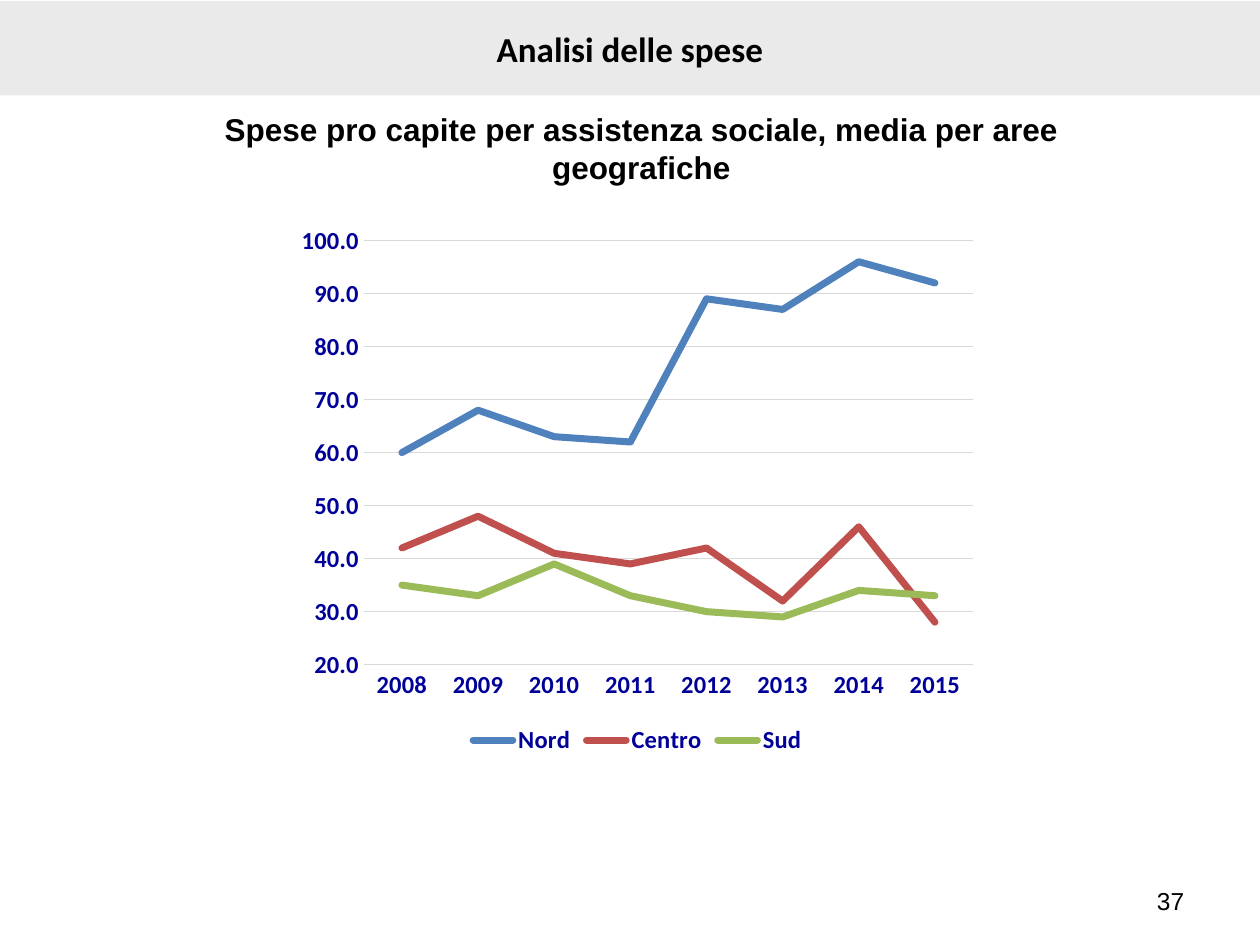
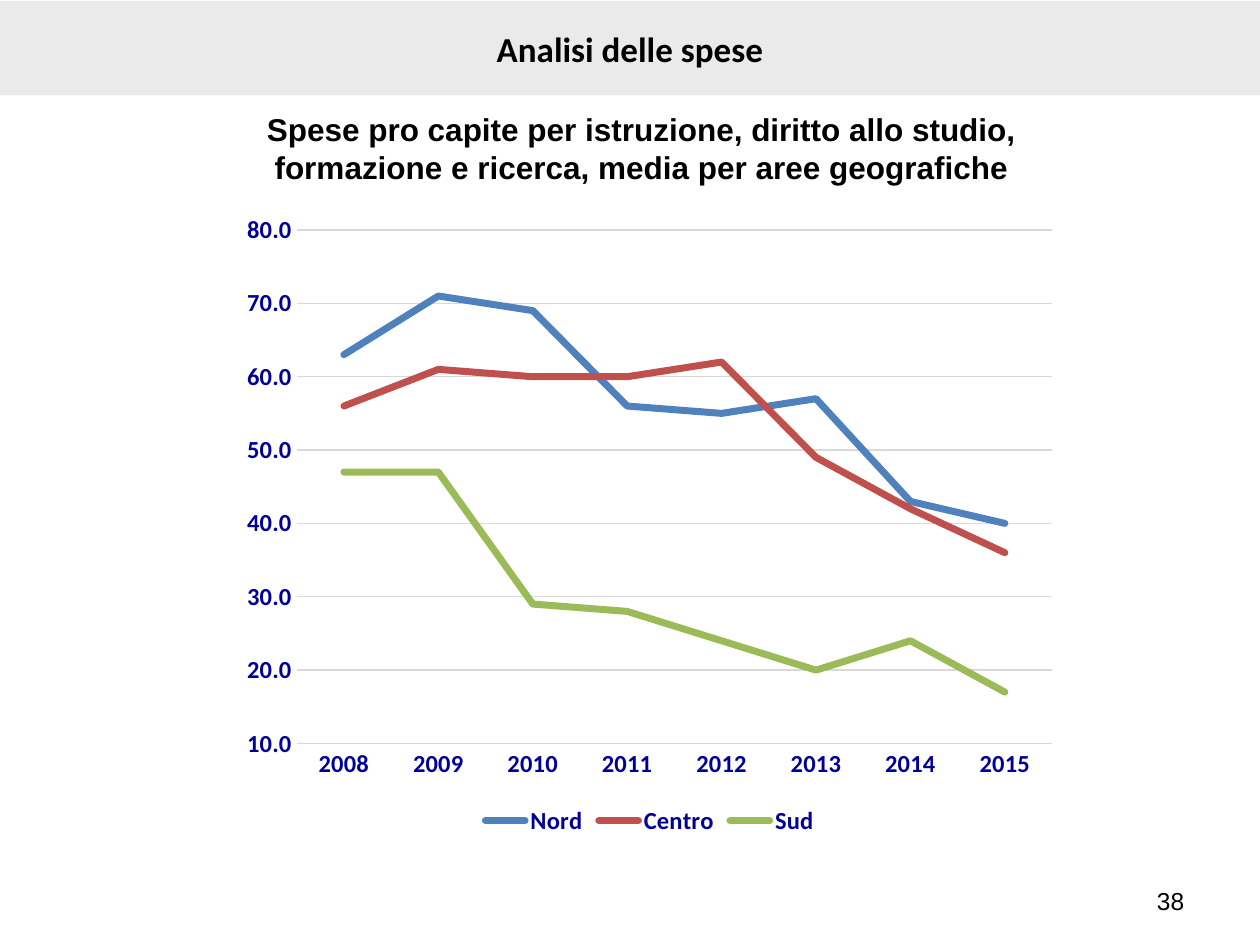
from pptx import Presentation
from pptx.chart.data import CategoryChartData
from pptx.dml.color import RGBColor
from pptx.enum.chart import XL_CHART_TYPE, XL_LEGEND_POSITION, XL_TICK_MARK
from pptx.enum.shapes import MSO_SHAPE
from pptx.enum.text import MSO_ANCHOR, PP_ALIGN
from pptx.oxml.ns import qn
from pptx.util import Pt

LINE = XL_CHART_TYPE.LINE
BOTTOM = XL_LEGEND_POSITION.BOTTOM
NO_TICK = XL_TICK_MARK.NONE
RECT = MSO_SHAPE.RECTANGLE
TOP, MIDDLE = MSO_ANCHOR.TOP, MSO_ANCHOR.MIDDLE
CENTER, RIGHT = PP_ALIGN.CENTER, PP_ALIGN.RIGHT

COLORS = {
    "text": "000000", "band": "EAEAEA", "label": "000099", "grid": "D9D9D9",
    "Nord": "4F81BD", "Centro": "C0504D", "Sud": "9BBB59",
}
TITLE = "Analisi delle spese"
YEARS = [str(year) for year in range(2008, 2016)]
SLIDES = [
    {
        "number": "37",
        "heading": "Spese pro capite per assistenza sociale, media per aree geografiche",
        "box": (164.4, 122.6, 399.6, 311.8),
        "scale": (20, 100),
        "format": "0.0",
        "areas": {
            "Nord": (60, 68, 63, 62, 89, 87, 96, 92),
            "Centro": (42, 48, 41, 39, 42, 32, 46, 28),
            "Sud": (35, 33, 39, 33, 30, 29, 34, 33),
        },
    },
    {
        "number": "38",
        "heading": "Spese pro capite per istruzione, diritto allo studio, "
                   "formazione e ricerca, media per aree geografiche",
        "box": (131.6, 115.5, 479.2, 365),
        "scale": (10, 80),
        "format": "#,##0.0",
        "areas": {
            "Nord": (63, 71, 69, 56, 55, 57, 43, 40),
            "Centro": (56, 61, 60, 60, 62, 49, 42, 36),
            "Sud": (47, 47, 29, 28, 24, 20, 24, 17),
        },
    },
]
WIDTH, HEIGHT = 720, 540
BAND_BOX = (0, 0.5, WIDTH, 54)
HEADING_BOX = (113.4, 59.4, 506.2, 51.1)
NUMBER_BOX = (516.2, 500.4, 167.6, 28.8)


def rgb(name):
    return RGBColor.from_string(COLORS[name])


def points(box):
    return [Pt(v) for v in box]


def style_font(font, name, size, color="text", bold=False):
    font.name, font.size, font.bold = name, Pt(size), bold
    font.color.rgb = rgb(color)


def style_line(line, color, width):
    line.color.rgb = rgb(color)
    line.width = Pt(width)


def write(sp, text, name, size, bold, align, anchor):
    tf = sp.text_frame
    tf.word_wrap = True
    tf.vertical_anchor = anchor
    p = tf.paragraphs[0]
    p.alignment = align
    r = p.add_run()
    r.text = text
    style_font(r.font, name, size, bold=bold)


def add_text(s, box, *style):
    write(s.shapes.add_textbox(*points(box)), *style)


def add_band(s):
    sp = s.shapes.add_shape(RECT, *points(BAND_BOX))
    sp.shadow.inherit = False
    sp.fill.solid()
    sp.fill.fore_color.rgb = rgb("band")
    sp.line.fill.background()
    write(sp, TITLE, "Calibri", 20, True, CENTER, MIDDLE)


def add_line_chart(s, content):
    data = CategoryChartData(number_format=content["format"])
    data.categories = YEARS
    for area, values in content["areas"].items():
        data.add_series(area, values)
    chart = s.shapes.add_chart(LINE, *points(content["box"]), data).chart
    chart.has_title = False
    style_font(chart.font, "Calibri", 10)

    chart.has_legend = True
    chart.legend.position = BOTTOM
    chart.legend.include_in_layout = False
    style_font(chart.legend.font, "Calibri", 14, "label", True)

    years, amounts = chart.category_axis, chart.value_axis
    for axis in (years, amounts):
        axis.major_tick_mark = axis.minor_tick_mark = NO_TICK
        style_font(axis.tick_labels.font, "Calibri", 14, "label", True)
    style_line(years.format.line, "grid", 0.75)
    amounts.format.line.fill.background()
    amounts.minimum_scale, amounts.maximum_scale = content["scale"]
    amounts.major_unit = 10
    amounts.tick_labels.number_format = content["format"]
    amounts.tick_labels.number_format_is_linked = False
    style_line(amounts.major_gridlines.format.line, "grid", 0.75)

    chart.plots[0].vary_by_categories = False
    for series in chart.plots[0].series:
        series.smooth = False
        style_line(series.format.line, series.name, 4)
        series._element.find(".//" + qn("a:ln")).set("cap", "rnd")


def main():
    prs = Presentation()
    prs.slide_width, prs.slide_height = Pt(WIDTH), Pt(HEIGHT)
    for content in SLIDES:
        s = prs.slides.add_slide(prs.slide_layouts[6])
        add_text(s, NUMBER_BOX, content["number"], "Arial", 14, False, RIGHT, MIDDLE)
        add_text(s, HEADING_BOX, content["heading"], "Arial", 18, True, CENTER, TOP)
        add_line_chart(s, content)
        add_band(s)
    prs.save("out.pptx")


if __name__ == "__main__":
    main()
